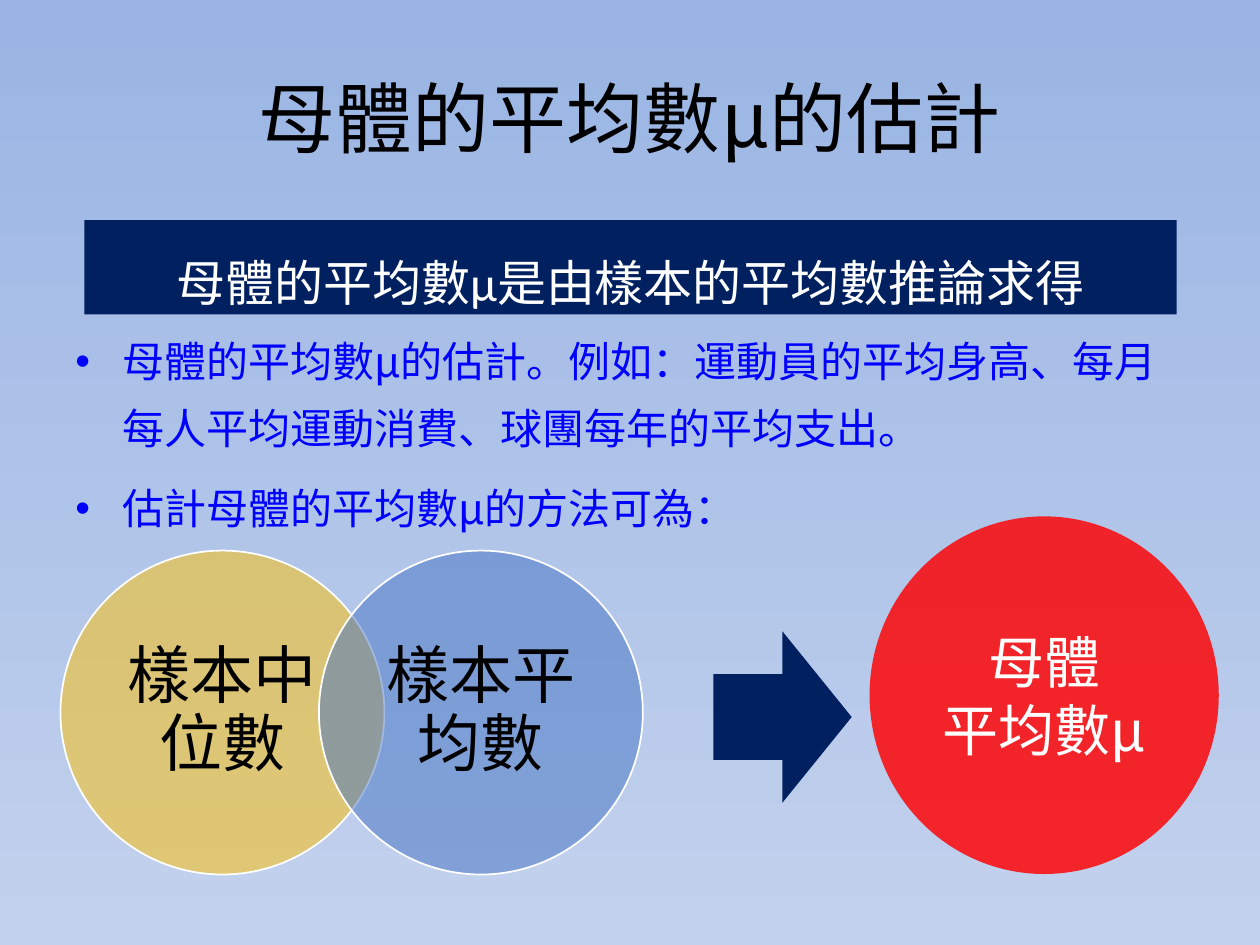
from lxml.etree import SubElement
from pptx import Presentation
from pptx.dml.color import RGBColor
from pptx.enum.shapes import MSO_SHAPE as Shape
from pptx.enum.text import MSO_ANCHOR as Anchor, PP_ALIGN as Align
from pptx.oxml.ns import qn
from pptx.util import Cm, Pt

CJK = "Noto Sans CJK SC"
NAVY = "002060"


def paint(color_format, color, opacity=100):
    """Set a solid colour from a hex string, with opacity in percent."""
    color_format.rgb = RGBColor.from_string(color)
    if opacity < 100:
        srgb = color_format._xFill.find(qn("a:srgbClr"))
        SubElement(srgb, qn("a:alpha"), val=str(opacity * 1000))


def write(paragraph, text, size, color, font=CJK, align=Align.CENTER):
    run = paragraph.add_run()
    run.text = text
    run.font.size = Pt(size)
    run.font.name = font
    paint(run.font.color, color)
    SubElement(run.font._element, qn("a:ea"), typeface=CJK)
    paragraph.alignment = align


presentation = Presentation()
presentation.slide_width, presentation.slide_height = Cm(25.4), Cm(19.05)
slide = presentation.slides.add_slide(presentation.slide_layouts[5])

# Background gradient, top to bottom
background = slide.background.fill
background.gradient()
background.gradient_angle = 270
for stop, color in zip(background.gradient_stops, ("9AB5E4", "C2D1ED")):
    paint(stop.color, color)

# Title
title = slide.shapes.title
title.left, title.top, title.width, title.height = Cm(1.27), Cm(0.76), Cm(22.86), Cm(3.18)
title.text_frame.vertical_anchor = Anchor.MIDDLE
write(title.text_frame.paragraphs[0], "母體的平均數μ的估計", 44, "000000")

# Bullets
body = slide.shapes.add_textbox(Cm(1.27), Cm(6.32), Cm(22.86), Cm(10.69)).text_frame
body.word_wrap = True
bullets = [
    "母體的平均數μ的估計。例如：運動員的平均身高、每月每人平均運動消費、球團每年的平均支出。",
    "估計母體的平均數μ的方法可為：",
]
for index, text in enumerate(bullets):
    paragraph = body.add_paragraph() if index else body.paragraphs[0]
    paragraph.line_spacing = Pt(38)
    paragraph.space_before = Pt(8 if index else 0)
    properties = paragraph._p.get_or_add_pPr()
    properties.set("marL", str(Cm(0.95)))
    properties.set("indent", str(-Cm(0.95)))
    SubElement(properties, qn("a:buFont"), typeface="Arial")
    SubElement(properties, qn("a:buChar"), char="•")
    write(paragraph, text, 24, "0000FF", align=Align.LEFT)

# Shapes: kind, left, top, width, height, fill, opacity, outline, side inset,
# line spacing, lines of text, size, text colour, font
shapes = [
    (Shape.OVAL, 1.22, 11.1, 6.53, 6.53, "FFC000", 50, "FFFFFF", 0.36,
     0.9, ["樣本中位數"], 36, "000000", CJK),
    (Shape.OVAL, 6.43, 11.1, 6.53, 6.53, "4472C4", 50, "FFFFFF", 0.36,
     0.9, ["樣本平均數"], 36, "000000", CJK),
    (Shape.RECTANGLE, 1.7, 4.44, 22.02, 1.9, NAVY, 100, None, 0.25,
     1.5, ["母體的平均數μ是由樣本的平均數推論求得"], 28, "FFFFFF", "Calibri"),
    (Shape.RIGHT_ARROW, 14.38, 12.73, 2.79, 3.45, NAVY, 100, None, 0.25,
     1.0, [], 18, "FFFFFF", CJK),
    (Shape.OVAL, 17.53, 10.41, 7.04, 7.21, "FF0000", 82, None, 0.25,
     1.0, ["母體", "平均數μ"], 32, "FFFFFF", CJK),
]
for (kind, left, top, width, height, fill, opacity, outline, inset,
     spacing, lines, size, color, font) in shapes:
    shape = slide.shapes.add_shape(kind, Cm(left), Cm(top), Cm(width), Cm(height))
    shape.shadow.inherit = False
    shape.fill.solid()
    paint(shape.fill.fore_color, fill, opacity)
    if outline:
        paint(shape.line.color, outline)
        shape.line.width = Pt(1)
    else:
        shape.line.fill.background()
    frame = shape.text_frame
    frame.word_wrap = True
    frame.vertical_anchor = Anchor.MIDDLE
    frame.margin_left = frame.margin_right = Cm(inset)
    for index, text in enumerate(lines):
        paragraph = frame.add_paragraph() if index else frame.paragraphs[0]
        paragraph.line_spacing = spacing
        write(paragraph, text, size, color, font)

presentation.save("out.pptx")
